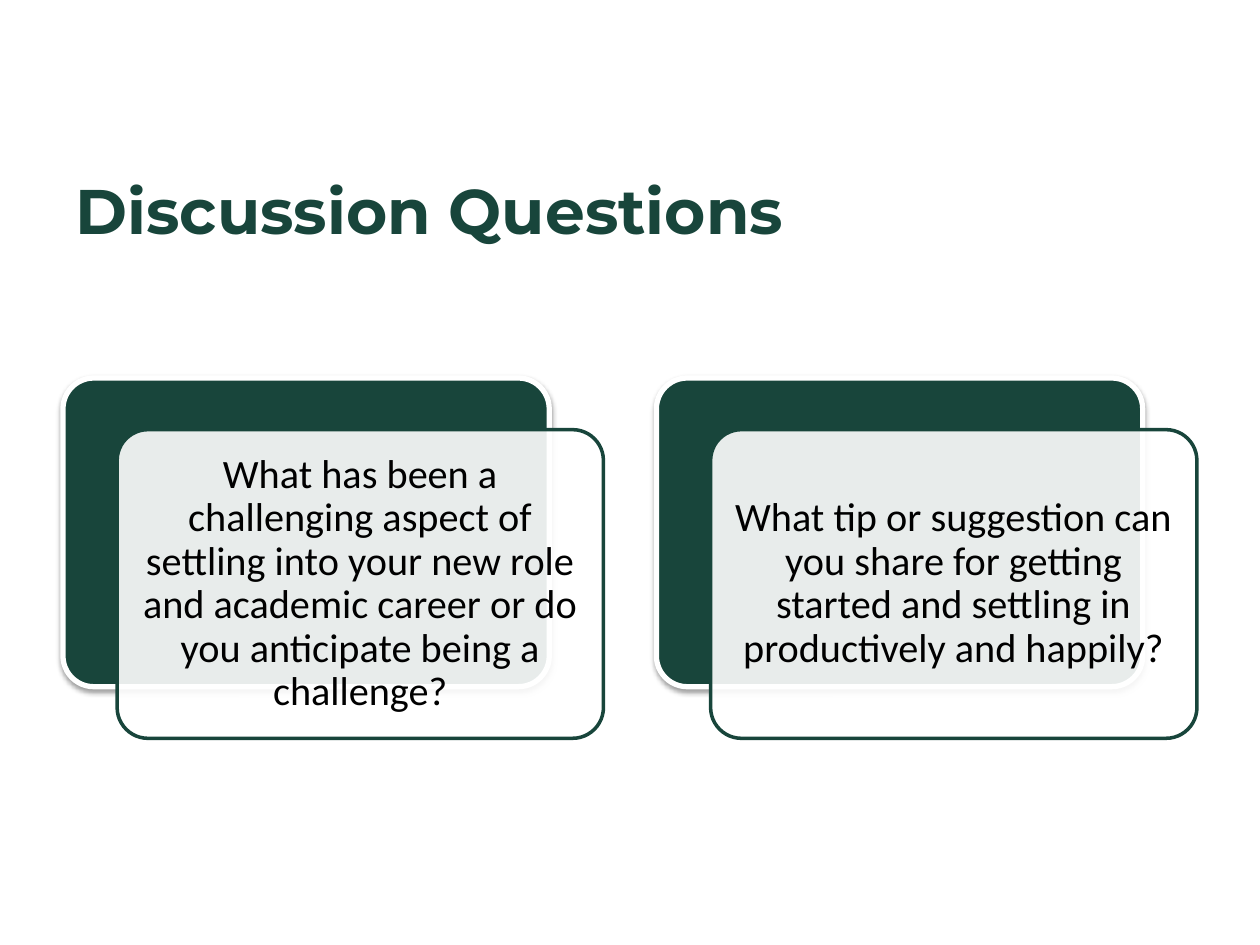
import lxml.etree
import pptx
import pptx.dml.color
import pptx.enum.shapes
import pptx.enum.text
import pptx.oxml
import pptx.oxml.ns
import pptx.util

ANCHOR = pptx.enum.text.MSO_ANCHOR
ALIGN = pptx.enum.text.PP_ALIGN
QUESTIONS = [
    "What has been a challenging aspect of settling into your new role "
    "and academic career or do you anticipate being a challenge?",
    "What tip or suggestion can you share for getting started and "
    "settling in productively and happily?",
]


def color(value):
    """Turn a hex string into a color."""
    return pptx.dml.color.RGBColor.from_string(value)


def write(box, text, font, size, ink, bold=False, align=ALIGN.LEFT, spacing=1.0):
    """Put one formatted paragraph into a box."""
    frame = box.text_frame
    frame.word_wrap = True
    frame.vertical_anchor = ANCHOR.MIDDLE
    frame.margin_left = frame.margin_right = pptx.util.Inches(0.1)
    frame.margin_top = frame.margin_bottom = pptx.util.Inches(0.1)
    para = frame.paragraphs[0]
    para.alignment = align
    para.line_spacing = spacing
    span = para.add_run()
    span.text = text
    span.font.name = font
    span.font.size = pptx.util.Pt(size)
    span.font.bold = bold
    span.font.color.rgb = color(ink)


class DiscussionPage:
    """Hold the style and the current slide, measured in inches."""

    green, white, black = "18453B", "FFFFFF", "000000"
    heading_font, body_font = "Montserrat", "Calibri"
    margin, card_top, card_width, card_height = 0.5, 3, 3.86, 2.45
    column_step, shift_x, shift_y, padding = 4.71, 0.43, 0.41, 0.07

    def __init__(self, deck):
        """Add a blank slide to the deck."""
        self.page = deck.slides.add_slide(deck.slide_layouts[6])

    def text(self, area, text, **style):
        """Add a text box."""
        box = self.page.shapes.add_textbox(*map(pptx.util.Inches, area))
        write(box, text, **style)

    def card(self, area, fill, line, width, opacity=100, shadow=False):
        """Add a rounded rectangle, see-through or shadowed on request."""
        shape = self.page.shapes.add_shape(
            pptx.enum.shapes.MSO_SHAPE.ROUNDED_RECTANGLE, *map(pptx.util.Inches, area))
        shape.adjustments[0] = 0.1
        shape.shadow.inherit = False
        shape.fill.solid()
        shape.fill.fore_color.rgb = color(fill)
        shape.line.color.rgb = color(line)
        shape.line.width = pptx.util.Pt(width)
        qn = pptx.oxml.ns.qn
        properties = shape.fill._xPr
        if opacity < 100:
            tint = properties.find(qn("a:solidFill")).find(qn("a:srgbClr"))
            lxml.etree.SubElement(tint, qn("a:alpha"), val=str(opacity * 1000))
        if shadow:
            properties.find(qn("a:effectLst")).append(pptx.oxml.parse_xml(
                f'<a:outerShdw {pptx.oxml.ns.nsdecls("a")} blurRad="40000" dist="20000" '
                f'dir="5400000" rotWithShape="0"><a:srgbClr val="{self.black}">'
                '<a:alpha val="38000"/></a:srgbClr></a:outerShdw>'))

    def title(self, text):
        """Add the slide heading."""
        self.text((self.margin, 1.21, 9, 0.9), text, font=self.heading_font,
                  size=36, ink=self.green, bold=True)

    def question(self, column, text):
        """Add a question on a pair of overlapping cards."""
        left, top = self.margin + column * self.column_step, self.card_top
        width, height, pad = self.card_width, self.card_height, self.padding
        self.card((left, top, width, height), self.green, self.white, 3, shadow=True)
        left, top = left + self.shift_x, top + self.shift_y
        self.card((left, top, width, height), self.white, self.green, 2, opacity=90)
        self.text((left + pad, top + pad, width - 2 * pad, height - 2 * pad), text,
                  font=self.body_font, size=23, ink=self.black,
                  align=ALIGN.CENTER, spacing=0.9)


def main():
    """Build and save the deck."""
    deck = pptx.Presentation()
    deck.slide_width, deck.slide_height = pptx.util.Inches(10), pptx.util.Inches(7.5)
    page = DiscussionPage(deck)
    page.title("Discussion Questions")
    for column, text in enumerate(QUESTIONS):
        page.question(column, text)
    deck.save("out.pptx")


if __name__ == "__main__":
    main()
